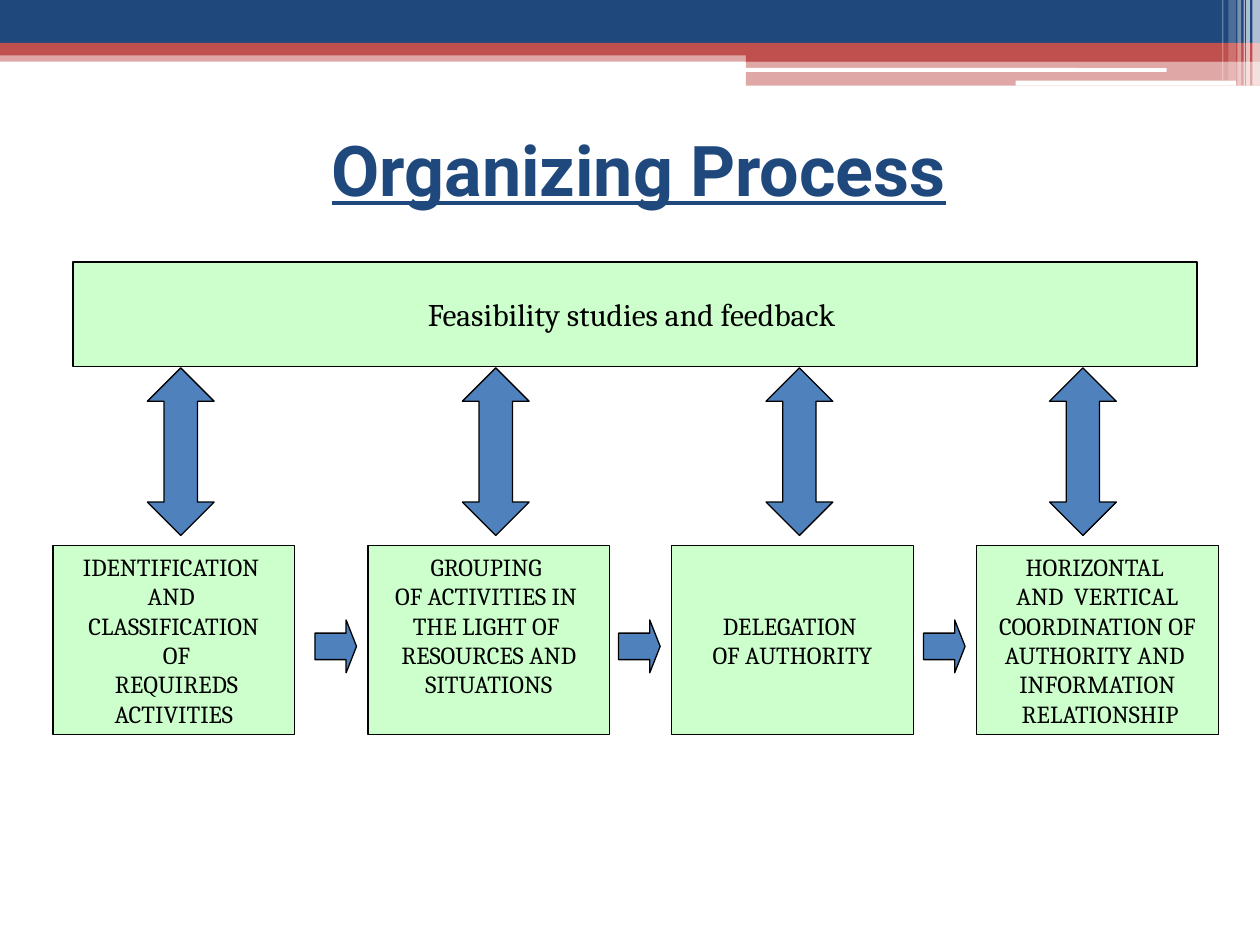
from lxml import etree
from pptx import Presentation
from pptx.dml.color import RGBColor
from pptx.enum.shapes import MSO_SHAPE
from pptx.enum.text import MSO_ANCHOR, PP_ALIGN
from pptx.oxml.ns import qn
from pptx.util import Inches, Pt

NAVY = RGBColor(0x1F, 0x49, 0x7D)
RED = RGBColor(0xC0, 0x50, 0x4D)
BLUE = RGBColor(0x4F, 0x81, 0xBD)
GREEN = RGBColor(0xCC, 0xFF, 0xCC)
WHITE = RGBColor(0xFF, 0xFF, 0xFF)
BLACK = RGBColor(0, 0, 0)

# Content: box left, arrow left, anchor, lines
FEEDBACK = ["Feasibility studies and feedback "]
STEPS = [
    (0.42, 1.17, MSO_ANCHOR.TOP,
     ["IDENTIFICATION ", "AND ", "CLASSIFICATION", " OF", " REQUIREDS", "ACTIVITIES"]),
    (2.92, 3.67, MSO_ANCHOR.TOP,
     ["GROUPING ", "OF ACTIVITIES IN ", "THE LIGHT OF ", "RESOURCES AND", " SITUATIONS "]),
    (5.33, 6.08, MSO_ANCHOR.MIDDLE,
     ["DELEGATION ", "OF AUTHORITY"]),
    (7.75, 8.33, MSO_ANCHOR.MIDDLE,
     ["HORIZONTAL ", "AND  VERTICAL", " COORDINATION OF ", "AUTHORITY AND ",
      "INFORMATION", " RELATIONSHIP"]),
]

# Header decoration: left, top, width, height, colour, opacity in percent
BANDS = [
    (0, 0.4, 10, 0.09, RED, 50),
    (0, 0, 10, 0.34, NAVY, 100),
    (0, 0.34, 10, 0.1, RED, 100),
    (5.92, 0.39, 4.08, 0.1, RED, 100),
    (5.92, 0.48, 4.08, 0.2, RED, 50),
]
RULES = [(5.91, 0.54, 3.35, 0.03), (8.06, 0.64, 1.75, 0.04)]
# Vertical stripes: left, width, height, opacity
STRIPES = [
    (9.94, 0.06, 0.68, 65), (9.89, 0.03, 0.68, 65), (9.87, 0.01, 0.68, 60),
    (9.82, 0.03, 0.68, 40), (9.75, 0.06, 0.64, 20), (9.7, 0.01, 0.64, 30),
]


def add_block(s, kind, box, fill, line=None, opacity=100, adjust=()):
    sp = s.shapes.add_shape(kind, *map(Inches, box))
    sp.shadow.inherit = False
    sp.fill.solid()
    sp.fill.fore_color.rgb = fill
    if opacity < 100:
        color = sp._element.spPr.find(qn("a:solidFill"))[0]
        etree.SubElement(color, qn("a:alpha")).set("val", str(opacity * 1000))
    if line is None:
        sp.line.fill.background()
    else:
        sp.line.color.rgb = line
        sp.line.width = Pt(0.75)
    for i, value in enumerate(adjust):
        sp.adjustments[i] = value
    return sp


def format_font(r, color, **values):
    r.font.color.rgb = color
    for name, value in values.items():
        setattr(r.font, name, value)


def add_box(s, box, lines, size, anchor):
    tf = add_block(s, MSO_SHAPE.RECTANGLE, box, GREEN, BLACK).text_frame
    tf.word_wrap = False
    tf.vertical_anchor = anchor
    for i, line in enumerate(lines):
        p = tf.add_paragraph() if i else tf.paragraphs[0]
        p.alignment = PP_ALIGN.CENTER
        r = p.add_run()
        r.text = line
        format_font(r, BLACK, name="Cambria", size=Pt(size))


def add_header(s):
    for *box, color, opacity in BANDS:
        add_block(s, MSO_SHAPE.RECTANGLE, box, color, opacity=opacity)
    for box in RULES:
        add_block(s, MSO_SHAPE.ROUNDED_RECTANGLE, box, WHITE)
    for left, width, height, opacity in STRIPES:
        add_block(s, MSO_SHAPE.RECTANGLE, (left, 0, width, height), WHITE, opacity=opacity)


def add_title(s):
    title = s.shapes.title
    title.left, title.top, title.width, title.height = map(Inches, (0.5, 0.75, 9, 1.17))
    tf = title.text_frame
    tf.vertical_anchor = MSO_ANCHOR.MIDDLE
    p = tf.paragraphs[0]
    p.alignment = PP_ALIGN.CENTER
    for text, marked in ((" ", False), ("Organizing Process", True)):
        r = p.add_run()
        r.text = text
        format_font(r, NAVY, name="Roboto", size=Pt(40), bold=marked, underline=marked)


def add_process(s):
    add_box(s, (0.58, 2.08, 8.92, 0.83), FEEDBACK, 18, MSO_ANCHOR.MIDDLE)
    for i, (left, arrow_left, anchor, lines) in enumerate(STEPS):
        add_box(s, (left, 4.33, 1.92, 1.5), lines, 14, anchor)
        add_block(s, MSO_SHAPE.UP_DOWN_ARROW, (arrow_left, 2.92, 0.53, 1.33),
                  BLUE, BLACK, adjust=(0.5, 0.5))
        if i:  # arrow from the previous step
            add_block(s, MSO_SHAPE.RIGHT_ARROW, (left - 0.42, 4.92, 0.33, 0.42),
                      BLUE, BLACK, adjust=(0.5, 0.25))


def main():
    prs = Presentation()
    prs.slide_width, prs.slide_height = Inches(10), Inches(7.5)
    s = prs.slides.add_slide(prs.slide_layouts[5])  # title only
    add_header(s)
    add_process(s)
    add_title(s)
    prs.save("out.pptx")


if __name__ == "__main__":
    main()
